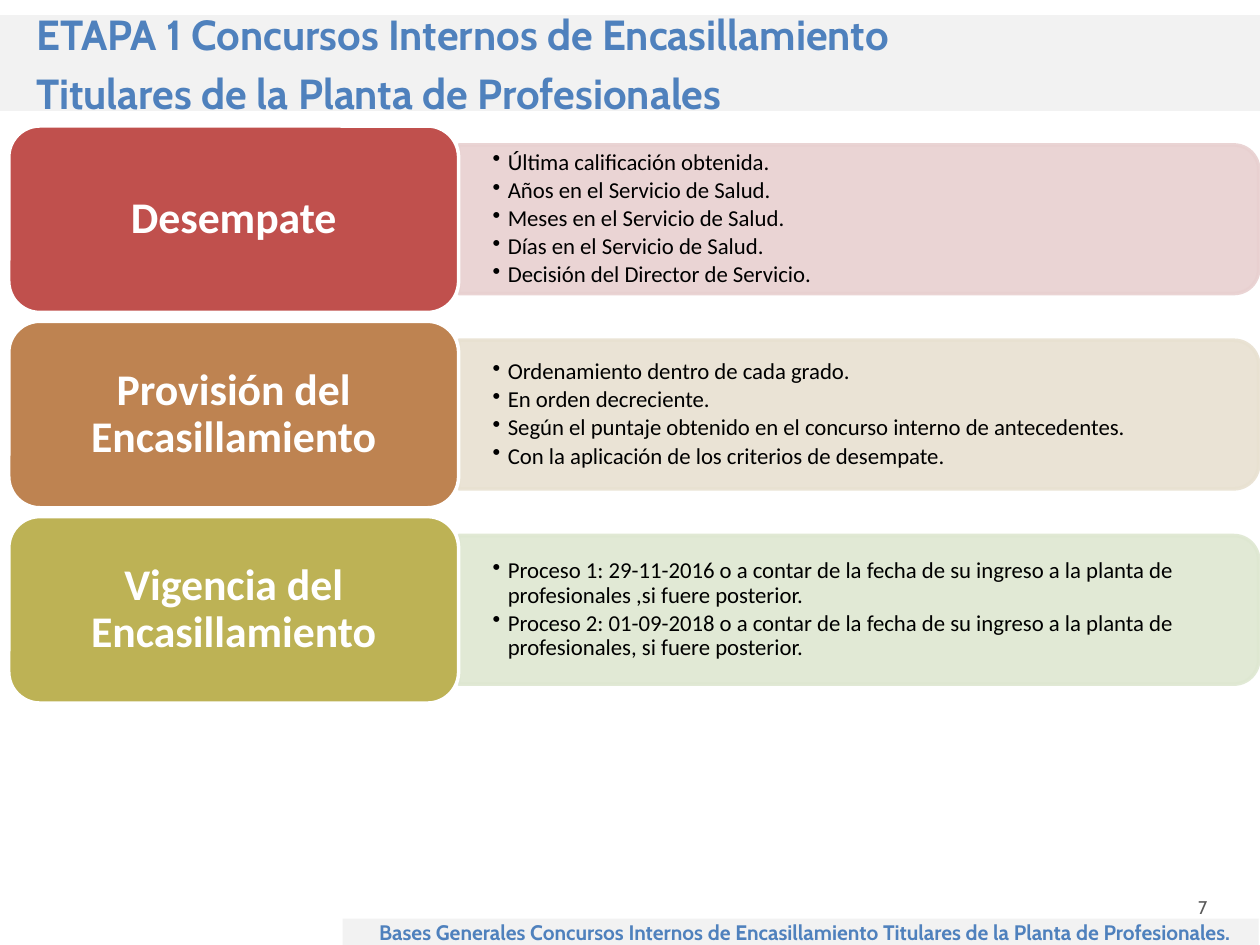
import pptx
import pptx.util
import pptx.dml.color
import pptx.enum.shapes
import pptx.enum.text
import pptx.oxml
import pptx.oxml.ns
from pptx.util import Inches

# Content
TITLE = ["ETAPA 1 Concursos Internos de Encasillamiento",
         "Titulares de la Planta de Profesionales"]
FOOTER = ["Bases Generales Concursos Internos de Encasillamiento "
          "Titulares de la Planta de Profesionales."]
PAGE_NUMBER = "7"
# Label, label colour, panel colour, bullets
ROWS = [
    ("Desempate", "C0504D", "E8D0D0", [
        "Última calificación obtenida.",
        "Años en el Servicio de Salud.",
        "Meses en el Servicio de Salud.",
        "Días en el Servicio de Salud.",
        "Decisión del Director de Servicio."]),
    ("Provisión del Encasillamiento", "BE8351", "E8E1D1", [
        "Ordenamiento dentro de cada grado.",
        "En orden decreciente.",
        "Según el puntaje obtenido en el concurso interno de antecedentes.",
        "Con la aplicación de los criterios de desempate."]),
    ("Vigencia del Encasillamiento", "BDB255", "DEE7D1", [
        "Proceso 1: 29-11-2016 o a contar de la fecha de su ingreso a la planta "
        "de profesionales ,si fuere posterior.",
        "Proceso 2: 01-09-2018 o a contar de la fecha de su ingreso a la planta "
        "de profesionales, si fuere posterior."]),
]

# Layout in inches
ROW_TOP, ROW_PITCH = 1.0, 1.55
LABEL_LEFT, LABEL_WIDTH, LABEL_HEIGHT = 0.07, 3.57, 1.48
PANEL_LEFT, PANEL_WIDTH, PANEL_HEIGHT = LABEL_LEFT + LABEL_WIDTH, 6.35, 1.18
TEXT_WIDTH, TEXT_HEIGHT = 6.29, 1.07

SHAPES = pptx.enum.shapes.MSO_SHAPE
ALIGN = pptx.enum.text.PP_ALIGN

presentation = pptx.Presentation()
presentation.slide_width, presentation.slide_height = Inches(10), Inches(7.5)
slide = presentation.slides.add_slide(presentation.slide_layouts[6])


def color(hex_string):
    return pptx.dml.color.RGBColor.from_string(hex_string)


def add_box(kind, left, top, width, height, fill, line=None):
    shape = slide.shapes.add_shape(
        kind, Inches(left), Inches(top), Inches(width), Inches(height))
    shape.shadow.inherit = False
    shape.fill.solid()
    shape.fill.fore_color.rgb = color(fill)
    if line:
        shape.line.color.rgb = color(line)
        shape.line.width = pptx.util.Pt(2)
    else:
        shape.line.fill.background()
    return shape


def add_text_box(left, top, width, height):
    return slide.shapes.add_textbox(
        Inches(left), Inches(top), Inches(width), Inches(height))


def set_frame(shape, inset_x=0.1, inset_y=0.05):
    frame = shape.text_frame
    frame.word_wrap = True
    frame.vertical_anchor = pptx.enum.text.MSO_ANCHOR.MIDDLE
    frame.margin_left = frame.margin_right = Inches(inset_x)
    frame.margin_top = frame.margin_bottom = Inches(inset_y)
    return frame


def write(frame, lines, font, size, hex_string, bold=False, align=ALIGN.LEFT,
          indent=0, bullet=False, line_spacing=1.0, before=0, after=0):
    for index, line in enumerate(lines):
        paragraph = frame.add_paragraph() if index else frame.paragraphs[0]
        paragraph.alignment = align
        paragraph.line_spacing = line_spacing
        paragraph.space_before = pptx.util.Pt(before if index else 0)
        paragraph.space_after = pptx.util.Pt(after)
        properties = paragraph._p.get_or_add_pPr()
        properties.set("marL", str(Inches(indent)))
        if bullet:
            properties.set("indent", str(-Inches(indent)))
            properties.append(pptx.oxml.parse_xml(
                f'<a:buChar {pptx.oxml.ns.nsdecls("a")} char="•"/>'))
        run = paragraph.add_run()
        run.text = line
        run.font.name = font
        run.font.size = pptx.util.Pt(size)
        run.font.bold = bold
        run.font.color.rgb = color(hex_string)


def set_opacity(shape, percent):
    for element in shape._element.spPr.iter(pptx.oxml.ns.qn("a:srgbClr")):
        element.append(pptx.oxml.parse_xml(
            f'<a:alpha {pptx.oxml.ns.nsdecls("a")} val="{percent * 1000}"/>'))


# Page number
number_frame = add_text_box(9.41, 7.06, 0.48, 0.29).text_frame
number_frame.word_wrap = False
write(number_frame, [PAGE_NUMBER], "Cabin", 10.5, "595959")

# Rows: a panel turned a quarter, its bullets, and the label in front
for row, (label, label_color, panel_color, bullets) in enumerate(ROWS):
    top = ROW_TOP + row * ROW_PITCH
    middle = top + LABEL_HEIGHT / 2

    panel = add_box(SHAPES.ROUND_2_SAME_RECTANGLE,
                    PANEL_LEFT + (PANEL_WIDTH - PANEL_HEIGHT) / 2,
                    middle - PANEL_WIDTH / 2,
                    PANEL_HEIGHT, PANEL_WIDTH, panel_color, panel_color)
    panel.rotation = 90
    set_opacity(panel, 90)

    text_box = add_text_box(PANEL_LEFT, middle - TEXT_HEIGHT / 2,
                            TEXT_WIDTH, TEXT_HEIGHT)
    write(set_frame(text_box, 0.27, 0.14), bullets, "Calibri", 13, "000000",
          indent=0.12, bullet=True, line_spacing=0.9, after=2)

    label_box = add_box(SHAPES.ROUNDED_RECTANGLE, LABEL_LEFT, top,
                        LABEL_WIDTH, LABEL_HEIGHT, label_color, "FFFFFF")
    write(set_frame(label_box), [label], "Calibri", 25, "FFFFFF", bold=True,
          align=ALIGN.CENTER, line_spacing=0.9)

# Footer and title bands
for lines, size, place in [(FOOTER, 12, (2.72, 7.29, 7.27, 0.21)),
                           (TITLE, 24, (0, 0.12, 10, 0.76))]:
    band = add_box(SHAPES.RECTANGLE, *place, "F2F2F2")
    write(set_frame(band), lines, "Cabin", size, "4F81BD", bold=True,
          indent=0.19, before=size * 0.2)

presentation.save("out.pptx")
